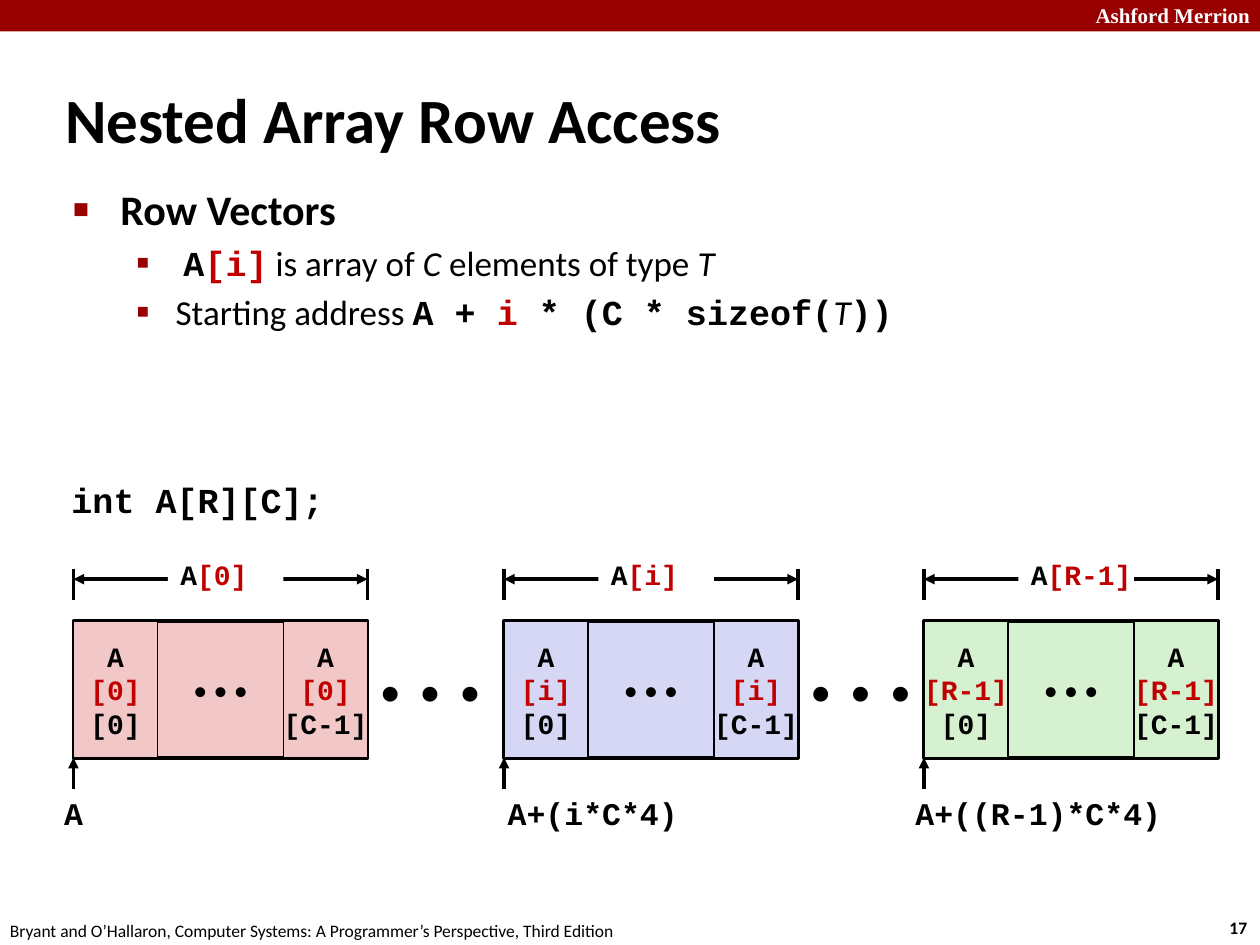
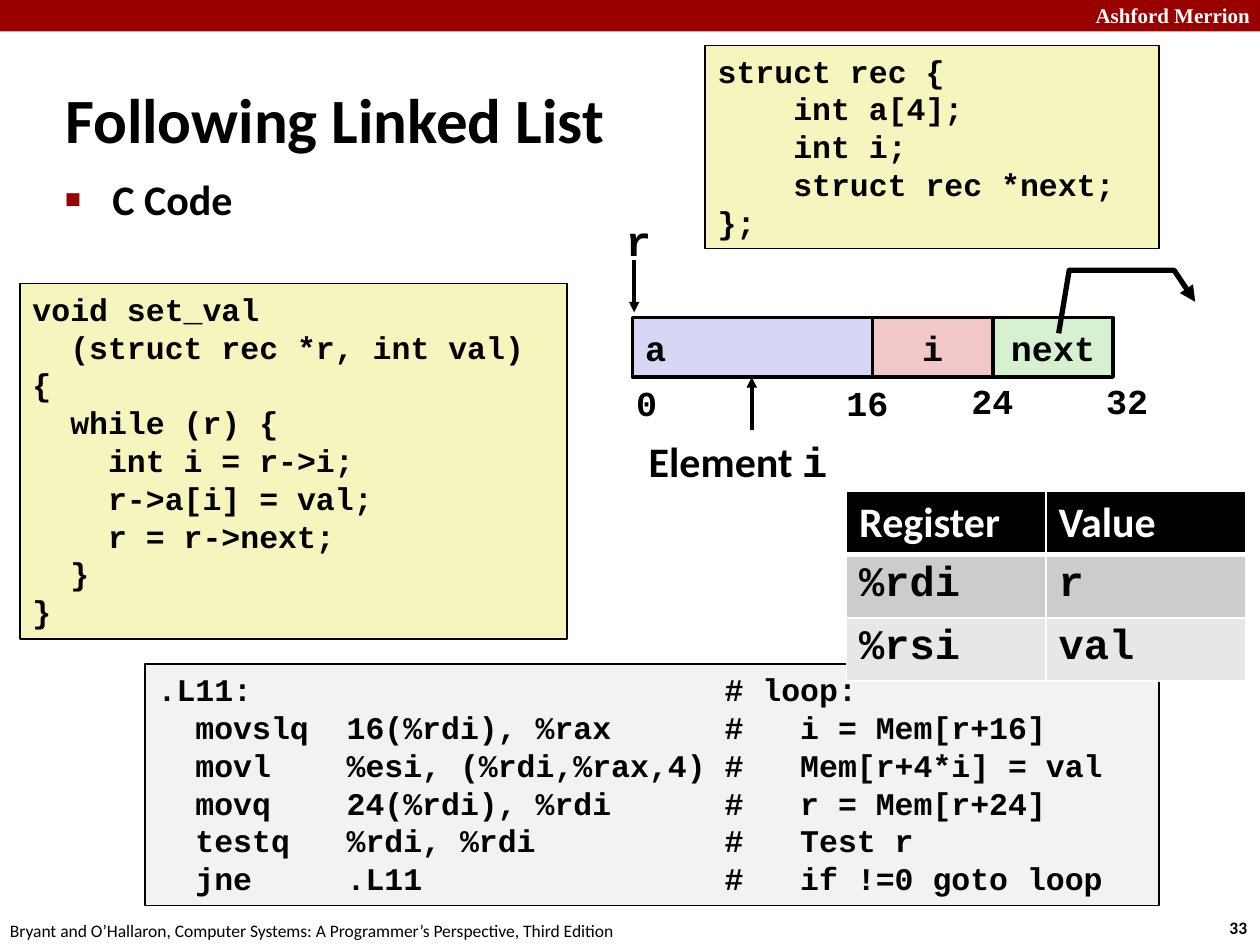
"""Build two lecture slides on nested arrays and linked lists."""
from dataclasses import dataclass, replace

from lxml.etree import SubElement
from pptx import Presentation
from pptx.dml.color import RGBColor
from pptx.enum.shapes import MSO_CONNECTOR, MSO_SHAPE
from pptx.enum.text import MSO_ANCHOR, MSO_AUTO_SIZE, PP_ALIGN
from pptx.oxml import parse_xml
from pptx.oxml.ns import nsdecls, qn
from pptx.util import Pt

COLORS = {
    "black": "000000", "white": "FFFFFF", "band": "990000", "index": "C00000",
    "pink": "F1C7C7", "violet": "D6D6F5", "green": "D5F1CF",
    "code": "F6F5BD", "assembly": "F2F2F2", "row_dark": "CCCCCC", "row_light": "E7E7E7",
}
SANS, MONO, SERIF = "Calibri", "Courier New", "Times New Roman"
CODE_CHAR = 10.8
FOOTER = "Bryant and O’Hallaron, Computer Systems: A Programmer’s Perspective, Third Edition"


@dataclass(frozen=True)
class Run:
    """A piece of text with one format."""
    text: str
    size: float = 16
    font: str = MONO
    bold: bool = True
    color: str = "black"
    italic: bool = False


@dataclass(frozen=True)
class Box:
    """A rectangle in points."""
    x: float
    y: float
    w: float
    h: float


@dataclass(frozen=True)
class Vector:
    """One row of the nested array."""
    x: float
    index: str
    fill: str
    address: str
    address_x: float


@dataclass(frozen=True)
class Field:
    """One member of the record."""
    name: str
    x: float
    w: float
    fill: str
    align: PP_ALIGN = PP_ALIGN.CENTER


def rgb(name: str) -> RGBColor:
    """Look up a named colour."""
    return RGBColor.from_string(COLORS[name])


def add_runs(p, runs: list[Run]) -> None:
    """Append formatted runs to a paragraph."""
    for run in runs:
        r = p.add_run()
        r.text = run.text
        r.font.size, r.font.name = Pt(run.size), run.font
        r.font.bold, r.font.italic = run.bold, run.italic
        r.font.color.rgb = rgb(run.color)


def fill_text(tf, paragraphs: list[list[Run]], align=PP_ALIGN.LEFT) -> None:
    """Write paragraphs into an empty text frame."""
    for i, runs in enumerate(paragraphs):
        p = tf.add_paragraph() if i else tf.paragraphs[0]
        p.alignment = align
        add_runs(p, runs)


def place(sp, box: Box) -> None:
    """Move and size a shape."""
    sp.left, sp.top, sp.width, sp.height = (Pt(v) for v in (box.x, box.y, box.w, box.h))


def add_text(s, box: Box, runs: list[Run]) -> None:
    """Add a one-line text box."""
    sp = s.shapes.add_textbox(Pt(box.x), Pt(box.y), Pt(box.w), Pt(box.h))
    sp.text_frame.word_wrap = False
    fill_text(sp.text_frame, [runs])


def add_rect(s, box: Box, fill: str, line: float = 0, paragraphs=(),
             align=PP_ALIGN.CENTER, inset: float = 7.2):
    """Add a flat rectangle with optional outline and text."""
    sp = s.shapes.add_shape(MSO_SHAPE.RECTANGLE, Pt(box.x), Pt(box.y), Pt(box.w), Pt(box.h))
    sp.shadow.inherit = False
    sp.fill.solid()
    sp.fill.fore_color.rgb = rgb(fill)
    if line:
        sp.line.color.rgb, sp.line.width = rgb("black"), Pt(line)
    else:
        sp.line.fill.background()
    tf = sp.text_frame
    tf.word_wrap, tf.vertical_anchor = False, MSO_ANCHOR.MIDDLE
    tf.margin_left = tf.margin_right = Pt(inset)
    fill_text(tf, list(paragraphs), align)
    return sp


def style_line(sp, width: float, ends: tuple[str, ...]) -> None:
    """Make an outline black and add its arrowheads."""
    sp.line.color.rgb, sp.line.width = rgb("black"), Pt(width)
    for end in ends:
        SubElement(sp.line._get_or_add_ln(), qn(f"a:{end}"), type="triangle")


def add_line(s, x1: float, y1: float, x2: float, y2: float, *ends: str) -> None:
    """Add a straight line, with arrowheads at the named ends."""
    sp = s.shapes.add_connector(MSO_CONNECTOR.STRAIGHT, Pt(x1), Pt(y1), Pt(x2), Pt(y2))
    style_line(sp, 2, ends)
    SubElement(sp._element.spPr, qn("a:effectLst"))


def add_code(s, box: Box, fill: str, lines: list[str], stops: tuple[int, ...]) -> None:
    """Add a code listing whose tab stops are counted in characters."""
    sp = add_rect(s, box, fill, 1, [[Run(line, 18)] for line in lines], PP_ALIGN.LEFT)
    tf = sp.text_frame
    tf.word_wrap, tf.vertical_anchor = True, MSO_ANCHOR.TOP
    for p in tf.paragraphs:
        tabs = SubElement(p._p.get_or_add_pPr(), qn("a:tabLst"))
        for stop in stops:
            SubElement(tabs, qn("a:tab"), pos=str(Pt(stop * CODE_CHAR)), algn="l")


def add_bullet(p, level: int) -> None:
    """Give a paragraph the square bullet of its level."""
    char, size, margin, hang = (("■", 40, 27, 27), ("▪", 110, 58.5, 22.5))[level]
    p.level, p.space_before = level, Pt(5 - level)
    pPr = p._p.get_or_add_pPr()
    pPr.set("marL", str(Pt(margin)))
    pPr.set("indent", str(-Pt(hang)))
    SubElement(SubElement(pPr, qn("a:buClr")), qn("a:srgbClr"), val=COLORS["band"])
    SubElement(pPr, qn("a:buSzPct"), val=str(size * 1000))
    SubElement(pPr, qn("a:buFont"), typeface=SANS)
    SubElement(pPr, qn("a:buChar"), char=char)


def new_slide(prs, title: str, number: int, body: Box, bullets: list[tuple[int, list[Run]]]):
    """Add a slide with band, footer, title and bulleted list."""
    s = prs.slides.add_slide(prs.slide_layouts[1])
    add_rect(s, Box(0, 0, 720, 18), "band")
    add_text(s, Box(619, -2, 103, 21.6), [Run("Ashford Merrion", 12, SERIF, color="white")])
    add_text(s, Box(695.5, 520.5, 26.6, 19.4), [Run(str(number), 10, SANS)])
    add_text(s, Box(-1.4, 522, 366, 19.4), [Run(FOOTER, 10, SANS, False)])
    holder, content = s.shapes.title, s.placeholders[1]
    place(holder, Box(30, 45, 546, 45.4))
    place(content, body)
    for sp in (holder, content):
        sp.text_frame.auto_size = MSO_AUTO_SIZE.NONE
    holder.text_frame.vertical_anchor = MSO_ANCHOR.MIDDLE
    fill_text(holder.text_frame, [[Run(title, 36, SANS)]])
    fill_text(content.text_frame, [runs for _, runs in bullets])
    for p, (level, _) in zip(content.text_frame.paragraphs, bullets):
        add_bullet(p, level)
    return s


def add_vector(s, v: Vector) -> None:
    """Draw one array row with its dimension line and start address."""
    width, cell, top, height = 168, 48, 355, 78
    right = v.x + width
    add_rect(s, Box(v.x, top, width, height), v.fill, 2.25, [[Run("• • •", 16, SANS, False)]])
    for x, column in ((v.x, "[0]"), (right - cell, "[C-1]")):
        lines = [[Run("A")], [Run(v.index, color="index")], [Run(column)]]
        add_rect(s, Box(x, top, cell, height), v.fill, 1, lines, inset=0)
    for x in (v.x, right):
        add_line(s, x, 325, x, 343)
    add_line(s, v.x, 331, right, 331, "headEnd", "tailEnd")
    add_rect(s, Box(v.x + 54, 313, 66, 30), "white", 0,
             [[Run("A"), Run(v.index, color="index")]], PP_ALIGN.LEFT)
    add_line(s, v.x, 451, v.x, top + height, "tailEnd")
    add_text(s, Box(v.address_x, 450, len(v.address) * CODE_CHAR + 14.4, 28.8),
             [Run(v.address, 18)])


def build_row_access(prs) -> None:
    """Build the slide on row access."""
    plain = Run("", 20, SANS, False)
    code = Run("", 20)
    variable = replace(plain, italic=True)
    s = new_slide(prs, "Nested Array Row Access", 17, Box(34.6, 101.5, 535, 114.5), [
        (0, [Run("Row Vectors", 24, SANS)]),
        (1, [replace(plain, text=" "), replace(code, text="A"),
             replace(code, text="[i]", color="index"),
             replace(plain, text=" is array of "), replace(variable, text="C"),
             replace(plain, text=" elements of type "), replace(variable, text="T")]),
        (1, [replace(plain, text="Starting address "), replace(code, text="A + "),
             replace(code, text="i", color="index"), replace(code, text=" * (C * sizeof("),
             replace(variable, text="T"), replace(code, text="))")]),
    ])
    add_text(s, Box(33.8, 270, 180, 31), [Run("int A[R][C];", 20)])
    for x in (210, 456):
        add_rect(s, Box(x, 355, 78, 78), "white", 0,
                 [[Run("•  •  •", 24, SANS, False)]], PP_ALIGN.LEFT)
    for vector in (
        Vector(42, "[0]", "pink", "A", 29.5),
        Vector(288, "[i]", "violet", "A+(i*C*4)", 283),
        Vector(528, "[R-1]", "green", "A+((R-1)*C*4)", 516),
    ):
        add_vector(s, vector)


def add_record(s) -> None:
    """Draw the record layout with its offsets and pointers."""
    top, height = 181.5, 34
    for f in (
        Field("i", 498.5, 69, "pink"),
        Field("next", 567.5, 68.5, "green"),
        Field("a", 361.5, 137, "violet", PP_ALIGN.LEFT),
    ):
        add_rect(s, Box(f.x, top, f.w, height), f.fill, 2, [[Run(f.name, 20)]], f.align)
    for x, y, offset in ((356.4, 214.6, "0"), (476.6, 214.6, "16"),
                         (548, 213.2, "24"), (625, 213.2, "32")):
        add_text(s, Box(x, y, 14.4 + 12 * len(offset), 31), [Run(offset, 20)])
    add_text(s, Box(350.6, 119, 28.8, 36), [Run("r", 24)])
    add_line(s, 362.4, 148.5, 362.4, 178.5, "tailEnd")
    add_line(s, 429.6, 245.5, 429.6, top + height, "tailEnd")
    add_text(s, Box(363.6, 245.5, 120, 30), [Run("Element ", 24, SANS), Run("i", 24)])
    outline = s.shapes.build_freeform(Pt(605), Pt(190.5))
    points = ((611, 154.5), (671, 154.5), (683, 172.5))
    outline.add_line_segments([(Pt(x), Pt(y)) for x, y in points], close=False)
    sp = outline.convert_to_shape()
    sp.shadow.inherit = False
    sp.fill.background()
    style_line(sp, 3, ("tailEnd",))


def add_registers(s) -> None:
    """Add the table of registers."""
    rows = (("Register", "Value", "black", SANS, "white"),
            ("%rdi", "r", "row_dark", MONO, "black"),
            ("%rsi", "val", "row_light", MONO, "black"))
    table = s.shapes.add_table(3, 2, Pt(483.8), Pt(281), Pt(228), Pt(88.5)).table
    for y, (name, value, fill, font, color) in enumerate(rows):
        table.rows[y].height = Pt(29.5)
        for x, text in enumerate((name, value)):
            cell = table.cell(y, x)
            fill_text(cell.text_frame, [[Run(text, 24, font, color=color)]])
            cell.fill.solid()
            cell.fill.fore_color.rgb = rgb(fill)
            for i, side in enumerate("LRTB"):
                width = 3 if (y, side) in ((0, "B"), (1, "T")) else 1
                cell._tc.get_or_add_tcPr().insert(i, parse_xml(
                    f'<a:ln{side} {nsdecls("a")} w="{Pt(width)}"><a:solidFill>'
                    f'<a:srgbClr val="{COLORS["white"]}"/></a:solidFill></a:ln{side}>'))


def build_linked_list(prs) -> None:
    """Build the slide on linked lists."""
    s = new_slide(prs, "Following Linked List", 33, Box(30, 95.8, 240, 56),
                  [(0, [Run("C Code", 24, SANS)])])
    add_code(s, Box(83, 379.5, 579.5, 138), "assembly", [
        ".L11:\t\t# loop:",
        "\tmovslq\t16(%rdi), %rax\t#\ti = Mem[r+16]",
        "\tmovl\t%esi, (%rdi,%rax,4)\t#\tMem[r+4*i] = val",
        "\tmovq\t24(%rdi), %rdi\t#\tr = Mem[r+24]",
        "\ttestq\t%rdi, %rdi\t#\tTest r",
        "\tjne\t.L11\t#\tif !=0 goto loop",
    ], (2, 10, 30, 34))
    add_code(s, Box(11.5, 162, 312.5, 203), "code", [
        "void set_val", "\t(struct rec *r, int val)", "{", "\twhile (r) {",
        "\t\tint i = r->i;", "\t\tr->a[i] = val;", "\t\tr = r->next;", "\t}", "}",
    ], (2, 4))
    add_code(s, Box(403, 26, 259.5, 116), "code", [
        "struct rec {", "\tint a[4];", "\tint i;", "\tstruct rec *next;", "};",
    ], (4,))
    add_registers(s)
    add_record(s)


def main() -> None:
    """Build and save the slides."""
    prs = Presentation()
    prs.slide_width, prs.slide_height = Pt(720), Pt(540)
    build_row_access(prs)
    build_linked_list(prs)
    prs.save("out.pptx")


if __name__ == "__main__":
    main()
